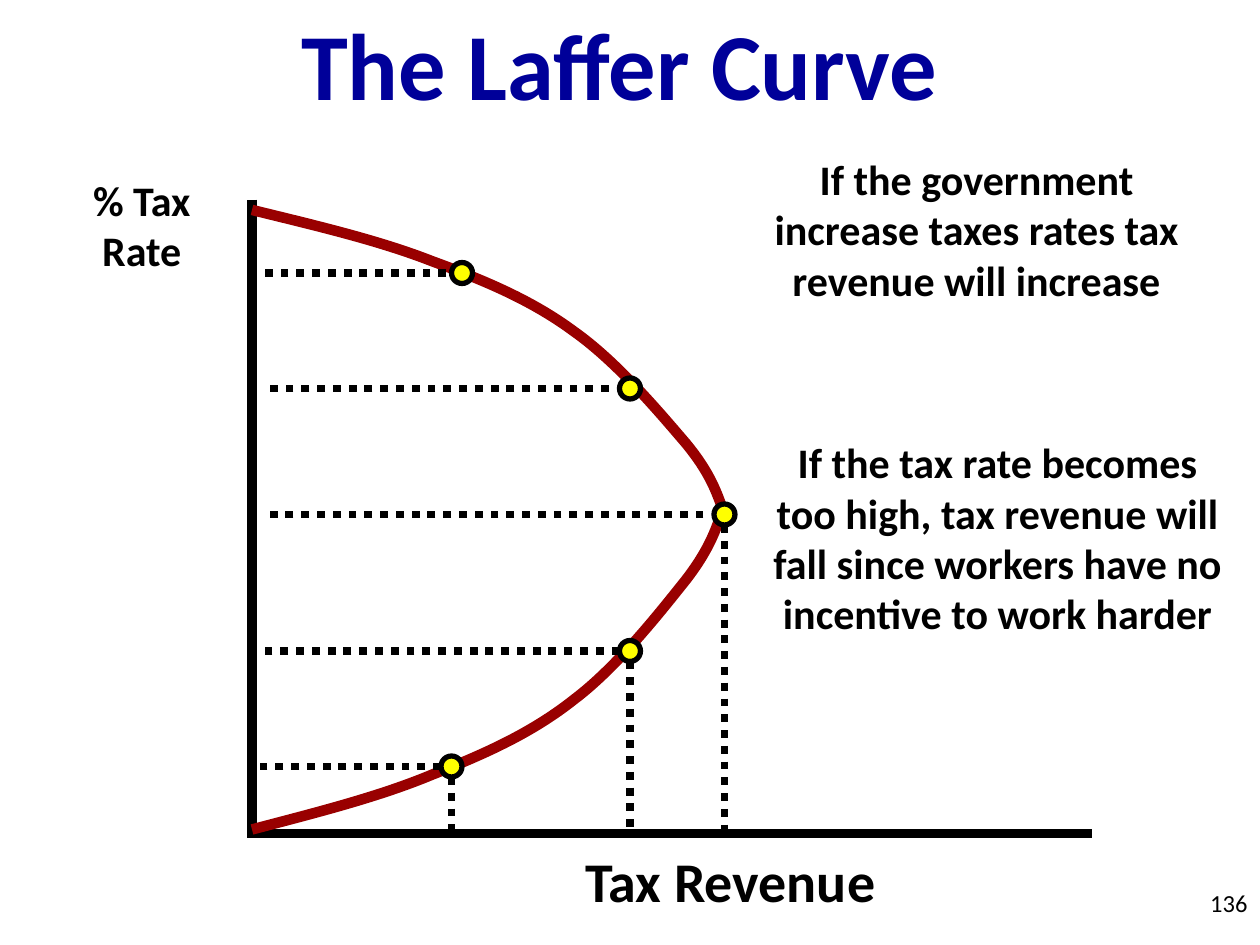
from lxml import etree
from pptx import Presentation
from pptx import util as u
from pptx.dml.color import RGBColor
from pptx.enum import dml, shapes, text
from pptx.oxml import ns

BLACK = RGBColor(0x00, 0x00, 0x00)
NAVY = RGBColor(0x00, 0x00, 0x99)
RED = RGBColor(0x99, 0x00, 0x00)
YELLOW = RGBColor(0xFF, 0xFF, 0x00)

COLUMNS = 120
AXIS_X, TOP_Y, BASE_Y, PEAK_Y = 24, 20, 79, 48

CURVE_X = [24, 30.1, 36.1, 41.2, 46.4, 50.8, 54.7, 58.8, 62.9, 65.3, 67.7, 68.3, 69]
UPPER_Y = [20, 21.5, 22.9, 24.9, 26.8, 28.7, 31.6, 34.5, 39.4, 42.2, 45.1, 47, 49]
STRETCH = (BASE_Y - PEAK_Y) / (UPPER_Y[-1] - TOP_Y)
LOWER_Y = [BASE_Y - (y - TOP_Y) * STRETCH for y in UPPER_Y]

POINTS = [
    dict(x=44, y=26, start=44, end=24, drops=False),
    dict(x=60, y=37, start=58, end=25, drops=False),
    dict(x=69, y=49, start=67, end=25, drops=True),
    dict(x=60, y=62, start=59, end=25, drops=True),
    dict(x=43, y=73, start=42, end=24, drops=True),
]


class Sheet:
    font = "Calibri"

    def __init__(self):
        self.deck = Presentation()
        self.deck.slide_width = u.Inches(10)
        self.deck.slide_height = u.Inches(7.5)
        self.page = self.deck.slides.add_slide(self.deck.slide_layouts[6])

    def grid(self, *lengths):
        cell = self.deck.slide_width / COLUMNS
        return [u.Emu(round(length * cell)) for length in lengths]

    def label(self, words, area, size=24, bold=True, color=BLACK,
              align=text.PP_ALIGN.CENTER, grow=True):
        frame = self.page.shapes.add_textbox(*self.grid(*area)).text_frame
        frame.word_wrap = True
        if grow:
            frame.auto_size = text.MSO_AUTO_SIZE.SHAPE_TO_FIT_TEXT
        para = frame.paragraphs[0]
        para.alignment = align
        span = para.add_run()
        span.text = words
        span.font.name = self.font
        span.font.size = u.Pt(size)
        span.font.bold = bold
        span.font.color.rgb = color

    def stroke(self, shape, color, width):
        shape.line.color.rgb = color
        shape.line.width = u.Pt(width)

    def guide(self, *ends):
        line = self.page.shapes.add_connector(
            shapes.MSO_CONNECTOR.STRAIGHT, *self.grid(*ends))
        self.stroke(line, BLACK, 4.5)
        line.line.dash_style = dml.MSO_LINE.ROUND_DOT
        etree.SubElement(line.element.spPr, ns.qn("a:effectLst"))

    def marker(self, x, y):
        dot = self.page.shapes.add_shape(
            shapes.MSO_SHAPE.OVAL, *self.grid(x - 1, y - 1, 2, 2))
        dot.shadow.inherit = False
        dot.fill.solid()
        dot.fill.fore_color.rgb = YELLOW
        self.stroke(dot, BLACK, 3)

    def curve(self, xs, ys):
        start, *rest = zip(self.grid(*xs), self.grid(*ys))
        builder = self.page.shapes.build_freeform(*start)
        builder.add_line_segments(rest, close=False)
        shape = builder.convert_to_shape()
        shape.shadow.inherit = False
        shape.fill.background()
        self.stroke(shape, RED, 6)
        segments = list(shape.element.iter(ns.qn("a:lnTo")))
        outline = segments[0].getparent()
        for first in range(0, len(segments), 3):
            bezier = etree.SubElement(outline, ns.qn("a:cubicBezTo"))
            for segment in segments[first:first + 3]:
                bezier.append(segment[0])
                outline.remove(segment)

    def axes(self, *area):
        table = self.page.shapes.add_table(1, 1, *self.grid(*area)).table
        table.first_row = table.horz_banding = False
        cell = table.cell(0, 0)
        cell.fill.background()
        properties = cell._tc.get_or_add_tcPr()
        for place, side in enumerate("LRTB"):
            border = etree.Element(ns.qn(f"a:ln{side}"))
            if side in "LB":
                border.set("w", str(u.Pt(6)))
                fill = etree.SubElement(border, ns.qn("a:solidFill"))
                etree.SubElement(fill, ns.qn("a:srgbClr"), val=str(BLACK))
            else:
                etree.SubElement(border, ns.qn("a:noFill"))
            properties.insert(place, border)

    def point(self, x, y, start, end, drops):
        self.guide(start, y, end, y)
        if drops:
            self.guide(x, y + 1, x, BASE_Y)
        self.marker(x, y)


def main():
    sheet = Sheet()
    sheet.label("The Laffer Curve", (16, 0, 86, 12), size=54, color=NAVY)
    sheet.label("136", (95, 84, 25, 6), size=14, bold=False,
                align=text.PP_ALIGN.RIGHT, grow=False)
    sheet.axes(AXIS_X, 19, 80, 60.4)
    sheet.label("% Tax Rate", (4, 16, 19, 10.9))
    sheet.label("Tax Revenue", (44, 80, 51.1, 7.6), size=32)
    for ys in (LOWER_Y, UPPER_Y):
        sheet.curve(CURVE_X, ys)
    for point in POINTS:
        sheet.point(**point)
    sheet.label("If the government increase taxes rates tax revenue will increase",
                (70, 14, 46, 15.7))
    sheet.label("If the tax rate becomes too high, tax revenue will fall since "
                "workers have no incentive to work harder", (72, 41, 46, 20.6))
    sheet.deck.save("out.pptx")


if __name__ == "__main__":
    main()
